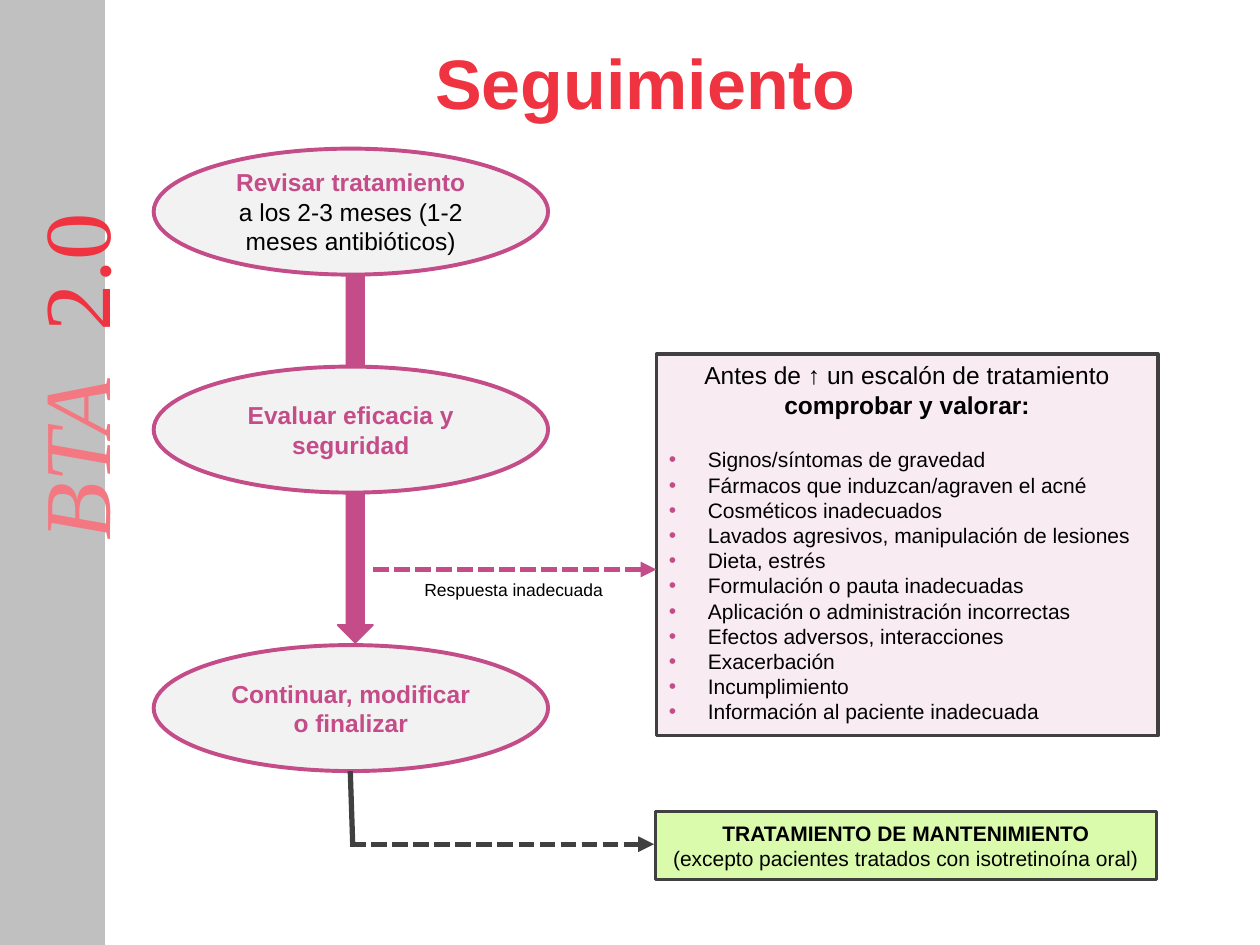
from pptx import Presentation
from pptx.dml.color import RGBColor
from pptx.enum.dml import MSO_LINE
from pptx.enum.shapes import MSO_CONNECTOR, MSO_SHAPE
from pptx.enum.text import MSO_ANCHOR, PP_ALIGN
from pptx.oxml.ns import qn
from pptx.util import Inches, Pt
from lxml import etree

COLUMNS, ROWS = 100, 75
CELL = Inches(0.1)

RED = RGBColor(0xEF, 0x33, 0x40)
SALMON = RGBColor(0xF4, 0x78, 0x81)
MAGENTA = RGBColor(0xC4, 0x4C, 0x88)
PINK = RGBColor(0xF9, 0xEB, 0xF2)
GREEN = RGBColor(0xDA, 0xFA, 0xAC)
SILVER = RGBColor(0xC0, 0xC0, 0xC0)
PALE_GREY = RGBColor(0xF2, 0xF2, 0xF2)
DARK_GREY = RGBColor(0x40, 0x40, 0x40)
BLACK = RGBColor(0, 0, 0)

RECTANGLE, OVAL, DOWN_ARROW = MSO_SHAPE.RECTANGLE, MSO_SHAPE.OVAL, MSO_SHAPE.DOWN_ARROW
STRAIGHT = MSO_CONNECTOR.STRAIGHT
DASHED = MSO_LINE.SQUARE_DOT
LEFT, CENTER = PP_ALIGN.LEFT, PP_ALIGN.CENTER
TOP, MIDDLE = MSO_ANCHOR.TOP, MSO_ANCHOR.MIDDLE

STEP_LEFT, STEP_WIDTH, STEP_HEIGHT = 12.2, 31.3, 10
STEPS = (
    (11.8, [("Revisar tratamiento", True, MAGENTA),
            ("a los 2-3 meses (1-2 meses antibióticos)", False, BLACK)]),
    (29.1, [("Evaluar eficacia y seguridad", True, MAGENTA)]),
    (51.2, [("Continuar, modificar o finalizar", True, MAGENTA)]),
)
CHECKS = (
    "Signos/síntomas de gravedad",
    "Fármacos que induzcan/agraven el acné",
    "Cosméticos inadecuados",
    "Lavados agresivos, manipulación de lesiones",
    "Dieta, estrés",
    "Formulación o pauta inadecuadas",
    "Aplicación o administración incorrectas",
    "Efectos adversos, interacciones",
    "Exacerbación",
    "Incumplimiento",
    "Información al paciente inadecuada",
)


def cells(*counts):
    """Turn counts of grid cells into lengths."""
    return [round(count * CELL) for count in counts]


def add_box(slide, kind, area, fill, line, width, anchor=MIDDLE):
    """Add a filled, outlined preset shape on the grid."""
    shape = slide.shapes.add_shape(kind, *cells(*area))
    shape.shadow.inherit = False
    shape.fill.solid()
    shape.fill.fore_color.rgb = fill
    shape.line.color.rgb = line
    shape.line.width = Pt(width)
    shape.text_frame.word_wrap = True
    shape.text_frame.vertical_anchor = anchor
    return shape


def add_text_box(slide, area, wrap=True, anchor=TOP):
    """Add an empty text box on the grid."""
    box = slide.shapes.add_textbox(*cells(*area))
    box.text_frame.word_wrap = wrap
    box.text_frame.vertical_anchor = anchor
    return box


def add_line(slide, start, end, color, dashed_arrow=False):
    """Add a straight line, optionally dashed with an arrowhead."""
    line = slide.shapes.add_connector(STRAIGHT, *cells(*start, *end))
    line.line.color.rgb = color
    line.line.width = Pt(3)
    properties = line.element.spPr
    if dashed_arrow:
        line.line.dash_style = DASHED
        outline = properties.find(qn("a:ln"))
        etree.SubElement(outline, qn("a:tailEnd"), type="triangle")
    etree.SubElement(properties, qn("a:effectLst"))


def next_paragraph(shape, align=CENTER):
    """Return the empty first paragraph of a shape or a new one."""
    frame = shape.text_frame
    paragraph = frame.paragraphs[0]
    if paragraph.runs:
        paragraph = frame.add_paragraph()
    paragraph.alignment = align
    return paragraph


def write(paragraph, text, size=14, color=BLACK, bold=False, italic=False, font="Arial"):
    """Add a formatted run to a paragraph."""
    run = paragraph.add_run()
    run.text = text
    run.font.name = font
    run.font.size = Pt(size)
    run.font.bold = bold
    run.font.italic = italic
    run.font.color.rgb = color


def add_bullet(paragraph):
    """Give a paragraph a hanging magenta bullet."""
    properties = paragraph._p.get_or_add_pPr()
    indent = Inches(0.31)
    properties.set("marL", str(indent))
    properties.set("indent", str(-indent))
    color = etree.SubElement(properties, qn("a:buClr"))
    etree.SubElement(color, qn("a:srgbClr"), val=str(MAGENTA))
    etree.SubElement(properties, qn("a:buFont"), typeface="Arial")
    etree.SubElement(properties, qn("a:buChar"), char="•")


def add_sidebar(slide):
    """Add the grey band with its vertical name."""
    add_box(slide, RECTANGLE, (0, 0, 8.3, ROWS), SILVER, SILVER, 0.75)
    box = add_text_box(slide, (-10.4, 22.7, 32.3, 10))
    box.rotation = 270
    paragraph = next_paragraph(box, LEFT)
    tabs = etree.SubElement(paragraph._p.get_or_add_pPr(), qn("a:tabLst"))
    etree.SubElement(tabs, qn("a:tab"), pos=str(Inches(1.66)), algn="l")
    write(paragraph, "BTA\t", 54, SALMON, italic=True, font="Times New Roman")
    write(paragraph, "2.0", 54, RED, font="Times New Roman")


def add_steps(slide):
    """Add the follow-up steps as ellipses."""
    for top, lines in STEPS:
        area = (STEP_LEFT, top, STEP_WIDTH, STEP_HEIGHT)
        step = add_box(slide, OVAL, area, PALE_GREY, MAGENTA, 2.25)
        for text, bold, color in lines:
            write(next_paragraph(step), text, color=color, bold=bold)


def add_checklist(slide):
    """Add the box of points to check before stepping up."""
    box = add_box(slide, RECTANGLE, (52.1, 28.1, 39.8, 30.3), PINK, DARK_GREY, 2, TOP)
    heading = next_paragraph(box)
    write(heading, "Antes de ↑ un escalón de tratamiento ")
    write(heading, "comprobar y valorar:", bold=True)
    for number, check in enumerate(CHECKS):
        paragraph = next_paragraph(box, LEFT)
        if number == 0:
            paragraph.space_before = Pt(16)
        add_bullet(paragraph)
        write(paragraph, check, 12)


def add_maintenance(slide):
    """Add the maintenance treatment box."""
    box = add_box(slide, RECTANGLE, (52, 64.4, 39.8, 5.4), GREEN, DARK_GREY, 1.5)
    write(next_paragraph(box), "TRATAMIENTO DE MANTENIMIENTO", 12, bold=True)
    write(next_paragraph(box), "(excepto pacientes tratados con isotretinoína oral)", 12)


def main():
    """Build and save the follow-up slide."""
    presentation = Presentation()
    presentation.slide_width, presentation.slide_height = cells(COLUMNS, ROWS)
    slide = presentation.slides.add_slide(presentation.slide_layouts[6])
    add_sidebar(slide)
    add_box(slide, DOWN_ARROW, (26.8, 21.8, 2.8, 29.2), MAGENTA, MAGENTA, 1)
    title = add_text_box(slide, (20.9, 2.1, 60.6, 8.7), anchor=MIDDLE)
    write(next_paragraph(title), "Seguimiento", 40, RED, bold=True)
    add_checklist(slide)
    add_line(slide, (29.6, 45.2), (52.1, 45.2), MAGENTA, dashed_arrow=True)
    add_steps(slide)
    label = add_text_box(slide, (32.7, 45.5, 16.3, 2.7), wrap=False)
    write(next_paragraph(label, LEFT), "Respuesta inadecuada", 10)
    add_maintenance(slide)
    add_line(slide, (27.8, 61.2), (28, 67.2), DARK_GREY)
    add_line(slide, (27.8, 67), (51.9, 67), DARK_GREY, dashed_arrow=True)
    presentation.save("out.pptx")


if __name__ == "__main__":
    main()
